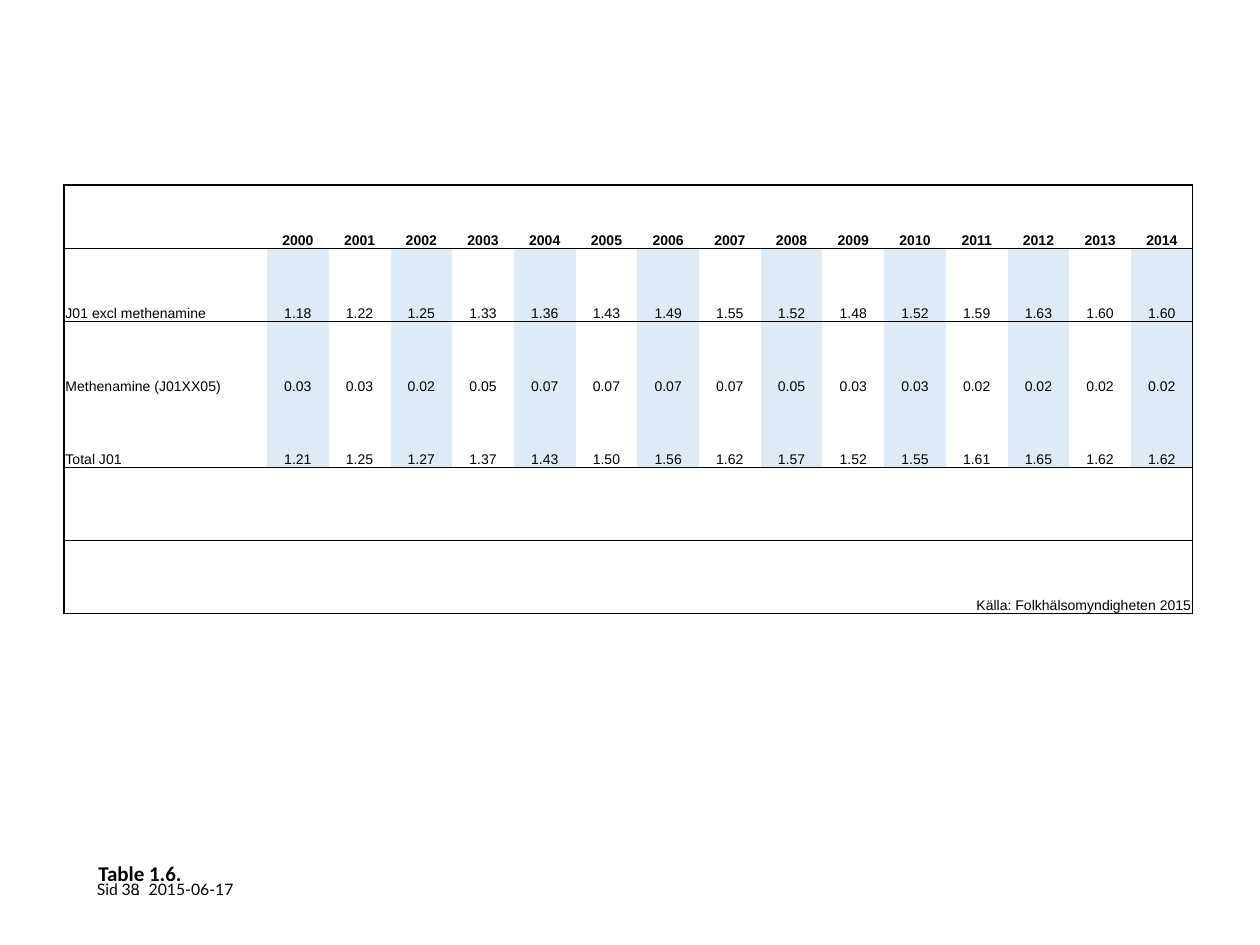
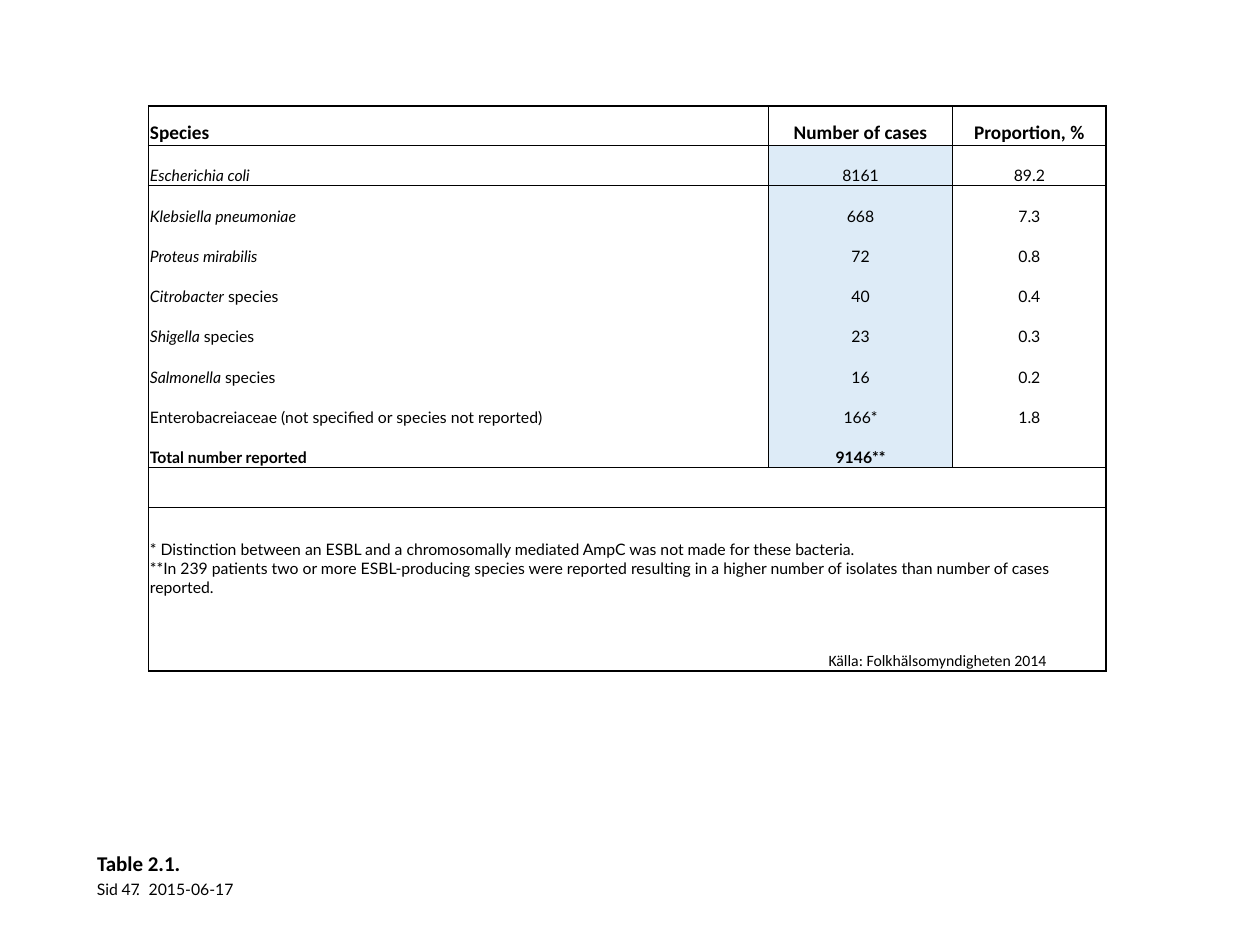
from dataclasses import dataclass

import pptx
import pptx.dml.color
import pptx.enum.text
import pptx.oxml.ns
import pptx.util
from lxml import etree

Inches = pptx.util.Inches
Pt = pptx.util.Pt
Align = pptx.enum.text.PP_ALIGN
Anchor = pptx.enum.text.MSO_ANCHOR


@dataclass(frozen=True)
class Theme:
    ink: str = "000000"
    band: str = "DDEBF7"
    title_font: str = "Calibri"
    body_font: str = "Lato"
    number_font: str = "Arial"
    title_size: int = 12
    header_size: int = 11
    body_size: int = 9
    number_size: int = 8
    outline: float = 1
    rule: float = 0.5


THEME = Theme()
NO_TABLE_STYLE = "{2D5ABB26-0587-4C30-8999-92F81FD0307C}"

CONSUMPTION = [
    [""] + [str(year) for year in range(2000, 2015)],
    ["J01 excl methenamine", "1.18", "1.22", "1.25", "1.33", "1.36", "1.43", "1.49", "1.55",
     "1.52", "1.48", "1.52", "1.59", "1.63", "1.60", "1.60"],
    ["Methenamine (J01XX05)", "0.03", "0.03", "0.02", "0.05", "0.07", "0.07", "0.07", "0.07",
     "0.05", "0.03", "0.03", "0.02", "0.02", "0.02", "0.02"],
    ["Total J01", "1.21", "1.25", "1.27", "1.37", "1.43", "1.50", "1.56", "1.62",
     "1.57", "1.52", "1.55", "1.61", "1.65", "1.62", "1.62"],
]

# A pair holds the italic and the upright part of a species name.
SPECIES = [
    ["Species", "Number of cases", "Proportion, %"],
    [("Escherichia coli", ""), "8161", "89.2"],
    [("Klebsiella pneumoniae", ""), "668", "7.3"],
    [("Proteus mirabilis", ""), "72", "0.8"],
    [("Citrobacter", " species"), "40", "0.4"],
    [("Shigella", " species"), "23", "0.3"],
    [("Salmonella", " species"), "16", "0.2"],
    ["Enterobacreiaceae (not specified or species not reported)", "166*", "1.8"],
    ["Total number reported", "9146**", ""],
]
SPECIES_NOTES = [
    "* Distinction between an ESBL and a chromosomally mediated AmpC was not made for these "
    "bacteria.",
    "**In 239 patients two or more ESBL-producing species were reported resulting in a higher "
    "number of isolates than number of cases reported.",
]


def format_paragraph(paragraph, font, size, bold=False, align=Align.LEFT):
    paragraph.alignment = align
    paragraph.font.name = font
    paragraph.font.size = Pt(size)
    paragraph.font.bold = bold
    paragraph.font.color.rgb = pptx.dml.color.RGBColor.from_string(THEME.ink)


def set_margins(target, left, top, right, bottom):
    target.margin_left, target.margin_top = Inches(left), Inches(top)
    target.margin_right, target.margin_bottom = Inches(right), Inches(bottom)


def place(shape, left, top, width, height):
    shape.left, shape.top = Inches(left), Inches(top)
    shape.width, shape.height = Inches(width), Inches(height)


def add_title(slide, text, left, top):
    title = slide.shapes.title
    place(title, left, top, 3.2, 0.45)
    frame = title.text_frame
    frame.auto_size = pptx.enum.text.MSO_AUTO_SIZE.NONE
    frame.vertical_anchor = Anchor.BOTTOM
    set_margins(frame, 0, 0, 0, 0)
    paragraph = frame.paragraphs[0]
    paragraph.text = text
    paragraph.line_spacing = Pt(34)
    format_paragraph(paragraph, THEME.title_font, THEME.title_size, bold=True)


def add_label(slide, text, box, margins=(0, 0, 0, 0), anchor=Anchor.TOP, align=Align.LEFT,
              wrap=True):
    frame = slide.shapes.add_textbox(*map(Inches, box)).text_frame
    frame.word_wrap = wrap
    frame.vertical_anchor = anchor
    set_margins(frame, *margins)
    frame.paragraphs[0].text = text
    format_paragraph(frame.paragraphs[0], THEME.body_font, THEME.body_size, align=align)


def add_footer(slide, page):
    add_label(slide, ".", (1.02, 6.93, 0.16, 0.25), margins=(0.1, 0.05, 0.1, 0.05))
    add_label(slide, "Sid", (0.77, 6.98, 0.17, 0.15), wrap=False)
    add_label(slide, page, (0.78, 6.93, 0.33, 0.2), anchor=Anchor.BOTTOM, align=Align.RIGHT)
    add_label(slide, "2015-06-17", (1.18, 6.93, 0.86, 0.2), anchor=Anchor.BOTTOM)


def set_borders(cell, widths):
    """Draw borders from a mapping of side (L, R, T, B) to width in points."""
    qualified = pptx.oxml.ns.qn
    properties = cell._tc.get_or_add_tcPr()
    for side in "LRTB":
        if side in widths:
            line = etree.SubElement(properties, qualified(f"a:ln{side}"),
                                    w=str(Pt(widths[side])))
            fill = etree.SubElement(line, qualified("a:solidFill"))
            etree.SubElement(fill, qualified("a:srgbClr"), val=THEME.ink)


def write_cell(cell, content, font, size, bold=False, align=Align.LEFT):
    paragraph = cell.text_frame.paragraphs[0]
    if isinstance(content, tuple):
        italic, upright = content
        paragraph.add_run().text = italic
        paragraph.runs[0].font.italic = True
        if upright:
            paragraph.add_run().text = upright
    elif isinstance(content, list):
        for index, line in enumerate(content):
            if index:
                paragraph.add_line_break()
            paragraph.add_run().text = line
    else:
        paragraph.text = content
    format_paragraph(paragraph, font, size, bold, align)


def cell_borders(row, column, span, row_count, column_count, body_end, column_rules):
    """Outline the table, rule off header and body, and optionally part the columns."""
    widths = {}
    inner = column_rules and row <= body_end
    if column == 0 or inner:
        widths["L"] = THEME.rule if column else THEME.outline
    last = column + span == column_count
    if last or inner:
        widths["R"] = THEME.outline if last else THEME.rule
    if row == 0:
        widths["T"] = THEME.outline
    elif row in (1, body_end + 1):
        widths["T"] = THEME.rule
    if row == row_count - 1:
        widths["B"] = THEME.outline
    elif row in (0, body_end):
        widths["B"] = THEME.rule
    return widths


def add_data_table(slide, left, top, column_widths, row_heights, data, header_type, body_type,
                   merges, column_rules=False, bold_total=False):
    """Fill the first rows with data; merges are (row, column) cells that run to the right edge."""
    row_count, column_count = len(row_heights), len(column_widths)
    body_end = len(data) - 1
    frame = slide.shapes.add_table(row_count, column_count, Inches(left), Inches(top),
                                   Inches(sum(column_widths)), Inches(sum(row_heights)))
    table = frame.table
    table.first_row = table.horz_banding = False
    table._tbl.tblPr.find(pptx.oxml.ns.qn("a:tableStyleId")).text = NO_TABLE_STYLE
    for column, width in zip(table.columns, column_widths):
        column.width = Inches(width)
    for row, height in zip(table.rows, row_heights):
        row.height = Inches(height)
    for row, column in merges:
        table.cell(row, column).merge(table.cell(row, column_count - 1))

    for row in range(row_count):
        for column in range(column_count):
            cell = table.cell(row, column)
            set_margins(cell, 0.01, 0.01, 0.01, 0)
            cell.vertical_anchor = Anchor.BOTTOM
            set_borders(cell, cell_borders(row, column, cell.span_width, row_count,
                                           column_count, body_end, column_rules))
            if 1 <= row <= body_end and column % 2:
                cell.fill.solid()
                cell.fill.fore_color.rgb = pptx.dml.color.RGBColor.from_string(THEME.band)
            else:
                cell.fill.background()
            content = data[row][column] if row <= body_end else ""
            font, size = header_type if row == 0 else body_type
            write_cell(cell, content, font, size,
                       bold=row == 0 or (bold_total and row == body_end),
                       align=Align.CENTER if column else Align.LEFT)
    return table


def add_consumption_slide(presentation):
    slide = presentation.slides.add_slide(presentation.slide_layouts[5])
    add_footer(slide, "38")
    add_title(slide, "Table 1.6.", 0.78, 6.58)
    number_type = (THEME.number_font, THEME.number_size)
    table = add_data_table(slide, 0.51, 1.47, [1.61] + [0.49] * 15, [0.5] + [0.58] * 5,
                           CONSUMPTION, number_type, number_type, merges=[(5, 12)])
    write_cell(table.cell(5, 12), "Källa: Folkhälsomyndigheten 2015", *number_type,
               align=Align.RIGHT)


def add_species_slide(presentation):
    slide = presentation.slides.add_slide(presentation.slide_layouts[5])
    add_footer(slide, "47")
    add_title(slide, "Table 2.1.", 0.77, 6.5)
    body_type = (THEME.body_font, THEME.body_size)
    table = add_data_table(slide, 1.18, 0.84, [4.92, 1.46, 1.22],
                           [0.31] + [0.32] * 9 + [0.96, 0.34], SPECIES,
                           (THEME.title_font, THEME.header_size), body_type,
                           merges=[(10, 0), (11, 1)], column_rules=True, bold_total=True)
    notes = table.cell(10, 0)
    notes.vertical_anchor = Anchor.MIDDLE
    write_cell(notes, SPECIES_NOTES, *body_type)
    write_cell(table.cell(11, 1), "Källa: Folkhälsomyndigheten 2014", THEME.title_font,
               THEME.body_size, align=Align.CENTER)


def main():
    presentation = pptx.Presentation()
    presentation.slide_width, presentation.slide_height = Inches(10), Inches(7.5)
    add_consumption_slide(presentation)
    add_species_slide(presentation)
    presentation.save("out.pptx")


if __name__ == "__main__":
    main()
